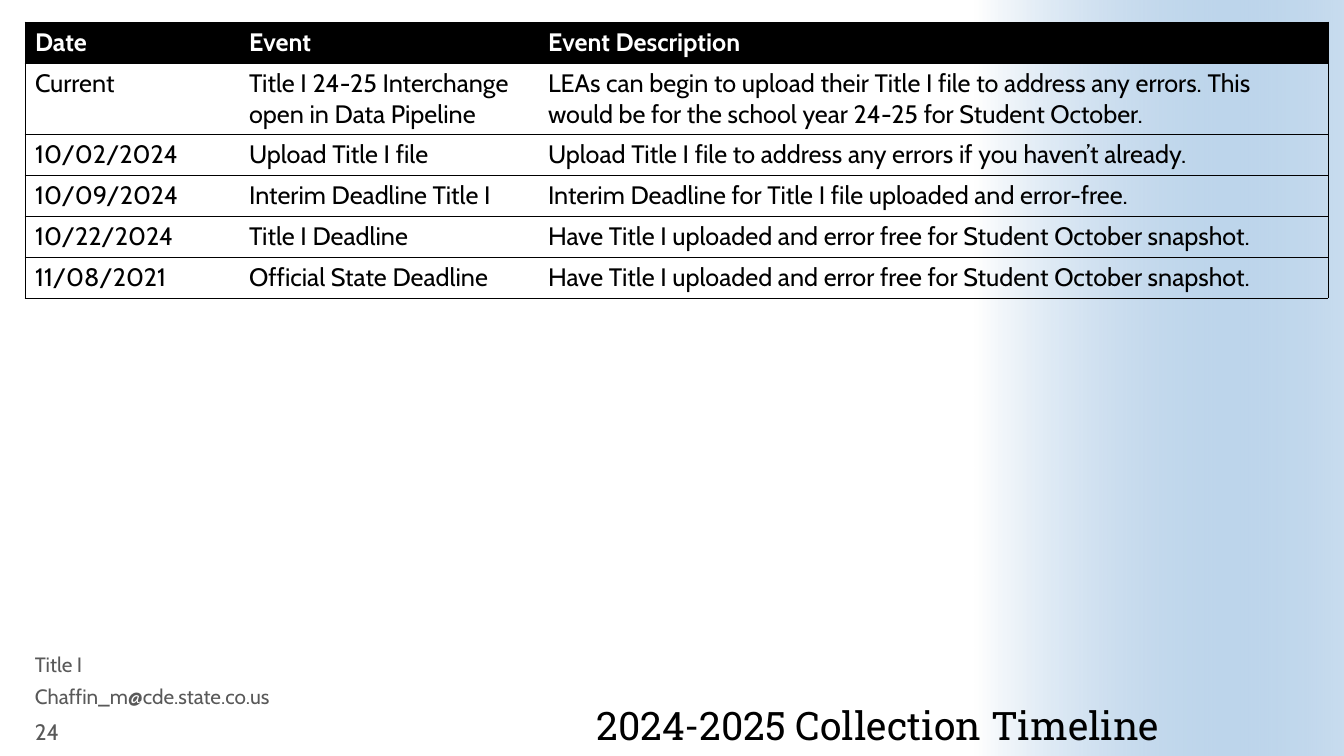
"""Build the collection timeline slide."""
from lxml import etree
from pptx import Presentation, util as u
from pptx.dml.color import RGBColor
from pptx.enum import shapes, text
from pptx.oxml.ns import qn

BLACK = RGBColor(0, 0, 0)
WHITE = RGBColor(255, 255, 255)
GREY = RGBColor(0x59, 0x59, 0x59)
BLUE = RGBColor(0x48, 0x8B, 0xC9)

SNAP = "Have Title I uploaded and error free for Student October snapshot."
ROWS = [
    ("Date", "Event", "Event Description"),
    ("Current", "Title I 24-25 Interchange open in Data Pipeline",
     "LEAs can begin to upload their Title I file to address any errors. "
     "This would be for the school year 24-25 for Student October."),
    ("10/02/2024", "Upload Title I file",
     "Upload Title I file to address any errors if you haven’t already."),
    ("10/09/2024", "Interim Deadline Title I",
     "Interim Deadline for Title I file uploaded and error-free."),
    ("10/22/2024", "Title I Deadline", SNAP),
    ("11/08/2021", "Official State Deadline", SNAP),
]
COLS = (214, 299, 790)
HIGH = (41, 71, 41, 41, 41, 41)

TITLE = dict(name="Roboto Slab", size=u.Pt(28), color=BLACK)
SMALL = dict(name="Cabin", size=u.Pt(14.8), color=GREY)
PAGE = dict(SMALL, size=u.Pt(16))
BODY = dict(name="Cabin", size=u.Pt(18), color=BLACK, bold=False)
HEAD = dict(BODY, color=WHITE, bold=True)

FLUSH = dict(margin_left=0, margin_right=0, margin_top=0, margin_bottom=0,
             vertical_anchor=text.MSO_ANCHOR.BOTTOM)
RIGHT = dict(alignment=text.PP_ALIGN.RIGHT, line_spacing=0.9)
TIGHT = dict(line_spacing=0.8)
MID = dict(vertical_anchor=text.MSO_ANCHOR.MIDDLE)
NOTES = [
    ("2024-2025 Collection Timeline", (429, 650, 730, 99), TITLE, FLUSH, RIGHT),
    ("24", (25, 716, 86, 31), PAGE, MID, {}),
    ("Title I", (25, 652, 392, 31), SMALL, {}, TIGHT),
    ("Chaffin_m@cde.state.co.us", (25, 684, 392, 31), SMALL, {}, TIGHT),
]


def px(n):
    return round(n * 914400 / 100.8)


def put(obj, vals):
    for key, val in vals.items():
        if key == "color":
            obj.color.rgb = val
        else:
            setattr(obj, key, val)


def add_fade(slide):
    fade = slide.shapes.add_shape(shapes.MSO_SHAPE.RECTANGLE,
                                  px(975), 0, px(369), px(756))
    fade.shadow.inherit = False
    fade.line.fill.background()
    fade.fill.gradient()
    fade.fill.gradient_angle = 0
    for stop, tint in zip(fade.fill.gradient_stops, (WHITE, BLUE)):
        stop.color.rgb = tint
    tint = fade.fill._xPr.findall(".//" + qn("a:srgbClr"))[-1]
    etree.SubElement(tint, qn("a:alpha"), val="30000")


def add_note(slide, words, box, font, frame, para):
    area = slide.shapes.add_textbox(*map(px, box)).text_frame
    area.word_wrap = True
    put(area, frame)
    line = area.paragraphs[0]
    put(line, para)
    run = line.add_run()
    run.text = words
    put(run.font, font)


def add_edges(cell, col):
    props = cell._tc.get_or_add_tcPr()
    shown = {"L": col == 0, "R": col == len(COLS) - 1, "T": True, "B": True}
    for side, show in shown.items():
        edge = etree.SubElement(props, qn("a:ln" + side), w=str(u.Pt(0.5)))
        if show:
            fill = etree.SubElement(edge, qn("a:solidFill"))
            etree.SubElement(fill, qn("a:srgbClr"), val=str(BLACK))
        else:
            etree.SubElement(edge, qn("a:noFill"))


def add_dates(slide):
    grid = slide.shapes.add_table(len(ROWS), len(COLS), px(25), px(22),
                                  px(sum(COLS)), px(sum(HIGH))).table
    grid.horz_banding = False
    for col, wide in zip(grid.columns, COLS):
        col.width = px(wide)
    for r, (row, high) in enumerate(zip(ROWS, HIGH)):
        grid.rows[r].height = px(high)
        for c, words in enumerate(row):
            cell = grid.cell(r, c)
            add_edges(cell, c)
            if r == 0:
                cell.fill.solid()
                cell.fill.fore_color.rgb = BLACK
            else:
                cell.fill.background()
            run = cell.text_frame.paragraphs[0].add_run()
            run.text = words
            put(run.font, BODY if r else HEAD)


def main():
    deck = Presentation()
    deck.slide_width, deck.slide_height = px(1344), px(756)
    slide = deck.slides.add_slide(deck.slide_layouts[6])
    add_fade(slide)
    for note in NOTES:
        add_note(slide, *note)
    add_dates(slide)
    deck.save("out.pptx")


if __name__ == "__main__":
    main()
